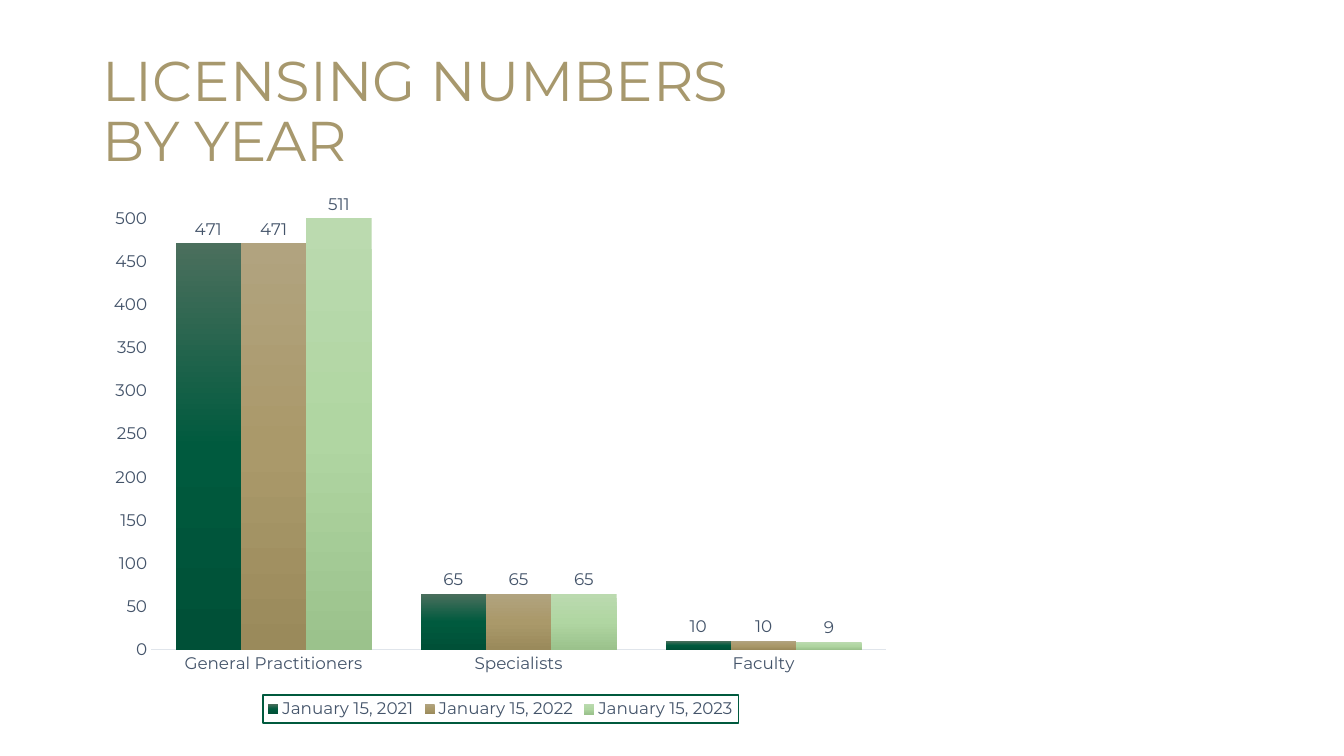
from copy import deepcopy
from dataclasses import dataclass

from pptx import Presentation
from pptx.chart.chart import Chart
from pptx.chart.data import CategoryChartData
from pptx.chart.series import BarSeries
from pptx.dml.color import RGBColor
from pptx.enum.chart import XL_CHART_TYPE, XL_LABEL_POSITION, XL_LEGEND_POSITION, XL_TICK_MARK
from pptx.enum.text import MSO_ANCHOR, MSO_AUTO_SIZE, PP_ALIGN
from pptx.oxml import parse_xml
from pptx.oxml.ns import nsdecls, qn
from pptx.slide import Slide
from pptx.util import Emu, Pt

EMU_PER_PX = 9144  # 100 px to the inch
FONT_NAME = "Montserrat"
GOLD = RGBColor(0xA7, 0x98, 0x6D)
SLATE = RGBColor(0x44, 0x54, 0x6A)
PALE_GREY = RGBColor(0xE0, 0xE5, 0xEB)
DARK_GREEN = RGBColor(0x00, 0x5A, 0x3E)

CATEGORIES = ("General Practitioners", "Specialists", "Faculty")
PLOT_AREA = {"x": 0.064, "y": 0.049, "w": 0.917, "h": 0.813}
TITLE_FONT = {"name": FONT_NAME, "size": Pt(40), "bold": False}
CHART_FONT = {"name": FONT_NAME, "size": Pt(12), "bold": False}


@dataclass(frozen=True)
class LicenceYear:
    date: str
    counts: tuple[int, ...]
    shades: tuple[RGBColor, RGBColor, RGBColor]


LICENCE_YEARS = (
    LicenceYear("January 15, 2021", (471, 65, 10),
                (RGBColor(0x4B, 0x6F, 0x5D), DARK_GREEN, RGBColor(0x00, 0x50, 0x37))),
    LicenceYear("January 15, 2022", (471, 65, 10),
                (RGBColor(0xB1, 0xA3, 0x7F), RGBColor(0xAA, 0x99, 0x6A), RGBColor(0x9A, 0x8A, 0x5B))),
    LicenceYear("January 15, 2023", (511, 65, 9),
                (RGBColor(0xBB, 0xDA, 0xAF), RGBColor(0xB0, 0xD6, 0xA2), RGBColor(0x9B, 0xC2, 0x8C))),
)


def px(length: int) -> Emu:
    return Emu(length * EMU_PER_PX)


def apply_format(target, values: dict) -> None:
    for attribute, value in values.items():
        setattr(target, attribute, value)


def format_font(font, values: dict, color: RGBColor) -> None:
    apply_format(font, values)
    font.color.rgb = color


def add_title(slide: Slide) -> None:
    title = slide.shapes.title
    apply_format(title, {"left": px(92), "top": px(40), "width": px(1150), "height": px(145)})
    frame = title.text_frame
    frame.text = "LICENSING NUMBERS\vBY YEAR"
    apply_format(frame, {"word_wrap": True, "auto_size": MSO_AUTO_SIZE.NONE,
                         "vertical_anchor": MSO_ANCHOR.MIDDLE})
    heading = frame.paragraphs[0]
    apply_format(heading, {"alignment": PP_ALIGN.LEFT, "line_spacing": 0.9})
    for run in heading.runs:
        format_font(run.font, TITLE_FONT, GOLD)


def style_bars(series: BarSeries, year: LicenceYear) -> None:
    """Fill the bars from top to bottom with three shades and label their values."""
    fill = series.format.fill
    fill.gradient()
    fill.gradient_angle = 270
    stop_list = series._element.find(f".//{qn('a:gsLst')}")
    stop_list.insert(1, deepcopy(stop_list[0]))
    for index, (stop, shade) in enumerate(zip(fill.gradient_stops, year.shades)):
        stop.position = index / 2
        stop.color.rgb = shade
    series.format.line.fill.background()
    series.invert_if_negative = False
    labels = series.data_labels
    apply_format(labels, {"show_value": True, "position": XL_LABEL_POSITION.OUTSIDE_END})
    format_font(labels.font, CHART_FONT, SLATE)


def style_axes(chart: Chart) -> None:
    for axis in (chart.category_axis, chart.value_axis):
        apply_format(axis, {"major_tick_mark": XL_TICK_MARK.NONE, "minor_tick_mark": XL_TICK_MARK.NONE,
                            "has_major_gridlines": False})
        format_font(axis.tick_labels.font, CHART_FONT, SLATE)
    baseline = chart.category_axis.format.line
    baseline.color.rgb = PALE_GREY
    baseline.width = Pt(0.75)
    apply_format(chart.value_axis, {"minimum_scale": 0, "maximum_scale": 500, "major_unit": 50})
    chart.value_axis.format.line.fill.background()


def add_legend(chart: Chart) -> None:
    chart.has_legend = True
    legend = chart.legend
    apply_format(legend, {"position": XL_LEGEND_POSITION.BOTTOM, "include_in_layout": False})
    format_font(legend.font, CHART_FONT, SLATE)
    border = parse_xml(
        f'<c:spPr {nsdecls("c", "a")}><a:noFill/><a:ln w="{Pt(1)}"><a:solidFill>'
        f'<a:srgbClr val="{DARK_GREEN}"/></a:solidFill></a:ln></c:spPr>')
    legend._element.find(qn("c:txPr")).addprevious(border)


def place_plot_area(chart: Chart) -> None:
    modes = "".join(f'<c:{side}Mode val="edge"/>' for side in "xy")
    bounds = "".join(f'<c:{side} val="{share}"/>' for side, share in PLOT_AREA.items())
    layout = parse_xml(
        f'<c:layout {nsdecls("c")}><c:manualLayout><c:layoutTarget val="inner"/>'
        f'{modes}{bounds}</c:manualLayout></c:layout>')
    plot_area = chart._chartSpace.chart.plotArea
    for automatic in plot_area.findall(qn("c:layout")):
        plot_area.remove(automatic)
    plot_area.insert(0, layout)


def add_licence_chart(slide: Slide) -> None:
    chart_data = CategoryChartData()
    chart_data.categories = CATEGORIES
    for year in LICENCE_YEARS:
        chart_data.add_series(year.date, year.counts)
    chart = slide.shapes.add_chart(XL_CHART_TYPE.COLUMN_CLUSTERED, px(99), px(191), px(795), px(527),
                                   chart_data).chart
    chart.has_title = False
    format_font(chart.font, CHART_FONT, SLATE)
    plot = chart.plots[0]
    apply_format(plot, {"gap_width": 75, "overlap": 0, "vary_by_categories": False})
    for series, year in zip(plot.series, LICENCE_YEARS):
        style_bars(series, year)
    style_axes(chart)
    add_legend(chart)
    place_plot_area(chart)


def main() -> None:
    presentation = Presentation()
    apply_format(presentation, {"slide_width": px(1333), "slide_height": px(750)})
    slide = presentation.slides.add_slide(presentation.slide_layouts[5])
    add_title(slide)
    add_licence_chart(slide)
    presentation.save("out.pptx")


if __name__ == "__main__":
    main()
